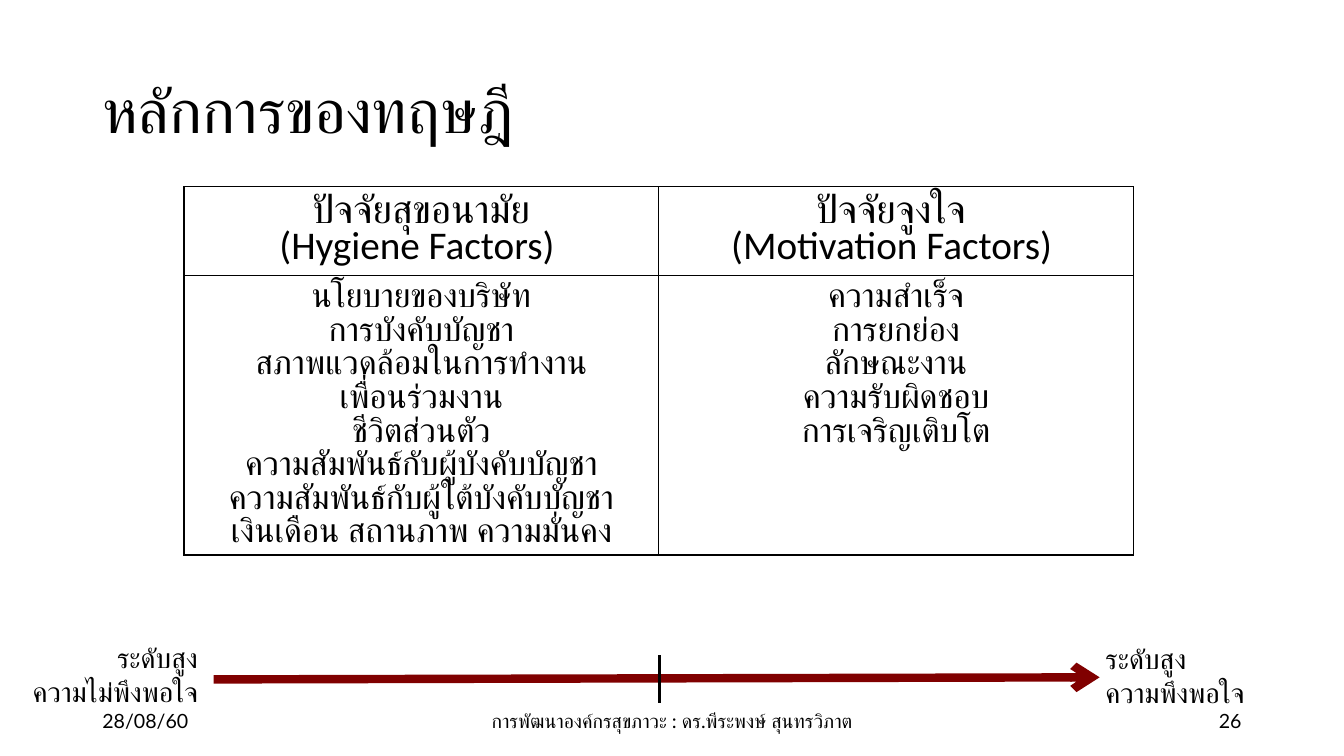
"""Build the slide on hygiene and motivation factors."""
from lxml import etree
from pptx import Presentation
from pptx.dml.color import RGBColor
from pptx.enum.shapes import MSO_CONNECTOR as CONNECTOR
from pptx.enum.text import MSO_ANCHOR as ANCHOR, PP_ALIGN as ALIGN
from pptx.oxml import parse_xml
from pptx.oxml.ns import nsdecls, qn
from pptx.util import Pt

BLACK = RGBColor(0x00, 0x00, 0x00)
WHITE = RGBColor(0xFF, 0xFF, 0xFF)
MAROON = RGBColor(0x80, 0x00, 0x00)

deck = Presentation()
deck.slide_width, deck.slide_height = Pt(960), Pt(540)
page = deck.slides.add_slide(deck.slide_layouts[6])


def write(frame, lines, size, font="Calibri", align=ALIGN.LEFT, spacing=None):
    for number, line in enumerate(lines):
        para = frame.paragraphs[0] if number == 0 else frame.add_paragraph()
        para.text = line
        para.alignment = align
        para.line_spacing = spacing
        para.font.size = Pt(size)
        para.font.name = font
        para.font.color.rgb = BLACK


def add_line(start, end, color, width):
    line = page.shapes.add_connector(CONNECTOR.STRAIGHT, *map(Pt, start + end))
    line.line.color.rgb = color
    line.line.width = Pt(width)
    etree.SubElement(line._element.spPr, qn("a:effectLst"))
    return line


TEXTS = [
    ((66, 28.8, 828, 104.4), ["หลักการของทฤษฎี"], 44, "Calibri", ALIGN.LEFT, 0.9, ANCHOR.MIDDLE),
    ((66, 500.4, 216, 28.8), ["28/08/60"], 14, "Lato", ALIGN.LEFT, None, ANCHOR.MIDDLE),
    ((318, 500.4, 324, 28.8), ["การพัฒนาองค์กรสุขภาวะ : ดร.พีระพงษ์ สุนทรวิภาต"], 14, "Lato",
     ALIGN.CENTER, None, ANCHOR.MIDDLE),
    ((678, 500.4, 216, 28.8), ["26"], 14, "Lato", ALIGN.RIGHT, None, ANCHOR.MIDDLE),
    ((-25.2, 454.3, 183.6, 86.4), ["ระดับสูง", "ความไม่พึงพอใจ"], 20, "Calibri",
     ALIGN.RIGHT, None, ANCHOR.TOP),
    ((782.6, 455, 191.5, 82.8), ["ระดับสูง", "ความพึงพอใจ"], 20, "Calibri",
     ALIGN.LEFT, None, ANCHOR.TOP),
]
for place, lines, size, font, align, spacing, anchor in TEXTS:
    box = page.shapes.add_textbox(*map(Pt, place))
    box.text_frame.word_wrap = True
    box.text_frame.vertical_anchor = anchor
    write(box.text_frame, lines, size, font, align, spacing)
    if len(lines) == 2 and align == ALIGN.RIGHT:
        first = box.text_frame.paragraphs[0]
        first._p.get_or_add_pPr().set("marR", str(Pt(10)))

scale = add_line((152.6, 485.3), (785.5, 483.8), MAROON, 6)
scale.line._get_or_add_ln().append(parse_xml(f'<a:tailEnd {nsdecls("a")} type="arrow"/>'))
add_line((470.9, 468), (470.9, 501.8), BLACK, 2.25)

HEADINGS = [
    ["ปัจจัยสุขอนามัย", "(Hygiene Factors) "],
    ["ปัจจัยจูงใจ ", "(Motivation Factors) "],
]
FACTORS = [
    ["นโยบายของบริษัท", "การบังคับบัญชา", "สภาพแวดล้อมในการทำงาน", "เพื่อนร่วมงาน",
     "ชีวิตส่วนตัว", "ความสัมพันธ์กับผู้บังคับบัญชา",
     "ความสัมพันธ์กับผู้ใต้บังคับบัญชา", "เงินเดือน สถานภาพ ความมั่นคง"],
    ["ความสำเร็จ", "การยกย่อง", "ลักษณะงาน", "ความรับผิดชอบ", "การเจริญเติบโต"],
]
ROWS = [(HEADINGS, 28, 63.6, ANCHOR.MIDDLE), (FACTORS, 24, 199.4, ANCHOR.TOP)]

table = page.shapes.add_table(2, 2, Pt(131.4), Pt(133.4), Pt(678.2), Pt(263)).table
table.first_row = table.horz_banding = False
for row, (texts, size, height, anchor) in enumerate(ROWS):
    table.rows[row].height = Pt(height)
    for column, lines in enumerate(texts):
        cell = table.cell(row, column)
        cell.vertical_anchor = anchor
        write(cell.text_frame, lines, size, align=ALIGN.CENTER, spacing=Pt(size))
        properties = cell._tc.get_or_add_tcPr()
        for side in ("lnL", "lnR", "lnT", "lnB"):
            properties.append(parse_xml(
                f'<a:{side} {nsdecls("a")} w="{Pt(1)}"><a:solidFill>'
                f'<a:srgbClr val="{BLACK}"/></a:solidFill></a:{side}>'))
        cell.fill.solid()
        cell.fill.fore_color.rgb = WHITE

deck.save("out.pptx")
